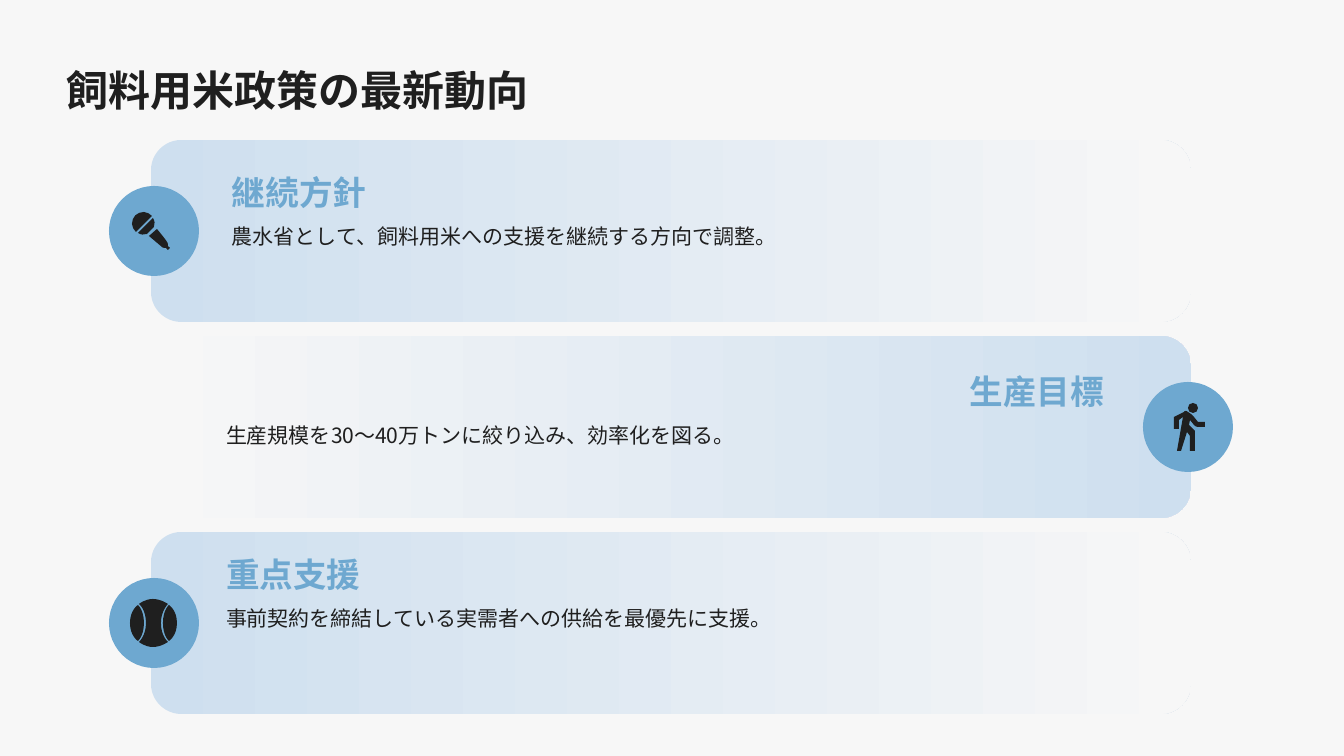
from dataclasses import dataclass

from lxml import etree
from pptx import Presentation
from pptx.dml.color import RGBColor
from pptx.enum.shapes import MSO_SHAPE
from pptx.enum.text import MSO_ANCHOR, MSO_AUTO_SIZE, PP_ALIGN
from pptx.oxml.ns import qn
from pptx.util import Emu, Pt

ROUNDED, OVAL = MSO_SHAPE.ROUNDED_RECTANGLE, MSO_SHAPE.OVAL
LEFT, RIGHT = PP_ALIGN.LEFT, PP_ALIGN.RIGHT
TOP, MIDDLE = MSO_ANCHOR.TOP, MSO_ANCHOR.MIDDLE
NO_AUTOFIT = MSO_AUTO_SIZE.NONE
EMU_PER_PX = 914400 / 100.8


@dataclass(frozen=True)
class Theme:
    font: str = "Noto Sans CJK SC"
    background: RGBColor = RGBColor(0xF7, 0xF7, 0xF7)
    band: RGBColor = RGBColor(0xCE, 0xDF, 0xEF)
    accent: RGBColor = RGBColor(0x6E, 0xA8, 0xD0)
    ink: RGBColor = RGBColor(0x1F, 0x1F, 0x1F)
    title_size: int = 30
    heading_size: int = 24
    body_size: int = 15


THEME = Theme()


def px(*lengths):
    """Turn pixel lengths into a list of EMU lengths."""
    return [Emu(round(length * EMU_PER_PX)) for length in lengths]


def write_text(shape, text, size, color, bold, spacing, anchor, insets, align=LEFT):
    frame = shape.text_frame
    frame.word_wrap = True
    frame.auto_size = NO_AUTOFIT
    frame.vertical_anchor = anchor
    (frame.margin_left, frame.margin_top,
     frame.margin_right, frame.margin_bottom) = px(*insets)
    frame.text = text
    paragraph = frame.paragraphs[0]
    paragraph.alignment = align
    paragraph.line_spacing = spacing
    paragraph.space_before = Pt(0)
    font = paragraph.font
    font.name, font.size, font.bold = THEME.font, Pt(size), bold
    font.color.rgb = color
    defaults = paragraph._p.find(".//" + qn("a:defRPr"))
    etree.SubElement(defaults, qn("a:ea"), typeface=THEME.font)


# Icon outlines in px from the badge centre: pairs are line ends,
# sextets are cubic curves (two control points and an end).
MICROPHONE = [
    [(0, -4), (1, -7, 1, -10, -1, -13), (-1, -13, -16, 2, -16, 2),
     (-13, 4, -10, 4, -7, 3), (-7, 3, 0, -4, 0, -4)],
    [(-2, -15), (-4, -17, -7, -19, -10, -19), (-17, -19, -22, -14, -22, -7),
     (-22, -4, -20, -1, -18, 1), (-18, 1, -2, -15, -2, -15)],
    [(14, 15), (14, 15, 14, 11, 13, 11), (13, 10, 3, -2, 3, -2), (-5, 5), (8, 16),
     (8, 17, 12, 17, 12, 17), (14, 19), (16, 17)],
]
WALKER = [
    [(2, -7), (6, -2), (7, -1, 8, 0, 10, 0), (17, 0), (17, -5), (10, -5),
     (6, -10), (5, -11, 4, -12, 3, -13), (0, -15), (-1, -16, -2, -16, -2, -16),
     (-3, -16, -4, -16, -4, -15), (-14, -10), (-14, 2), (-9, 2), (-9, -7),
     (-5, -10), (-11, 24), (-7, 24), (-1, 5), (2, 9), (2, 24), (7, 24), (7, 4),
     (1, -2)],
    [(5, -14), (8, -14, 10, -16, 10, -19), (10, -22, 8, -24, 5, -24),
     (2, -24, 0, -22, 0, -19), (0, -16, 2, -14, 5, -14)],
]
BALL = [
    [(7, 0), (7, -12, 14, -19, 14, -19), (14, -19, 7, -24, -1, -24),
     (-9, -24, -15, -19, -15, -19), (-15, -19, -8, -14, -8, 0),
     (-8, 13, -15, 19, -15, 19), (-15, 19, -9, 24, -1, 24),
     (7, 24, 14, 19, 14, 19), (14, 19, 7, 13, 7, 0)],
    [(-16, -18), (-16, -18, -24, -13, -24, 0), (-24, 13, -16, 18, -16, 18),
     (-16, 18, -10, 13, -10, 0), (-10, -13, -16, -18, -16, -18)],
    [(15, -18), (15, -18, 9, -13, 9, 0), (9, 13, 15, 18, 15, 18),
     (15, 18, 23, 13, 23, 0), (23, -13, 15, -18, 15, -18)],
]

# Heading, body, alignment, text left, text offset below band top, badge left, icon
BANDS = [
    ("継続方針", "農水省として、飼料用米への支援を継続する方向で調整。",
     LEFT, 219, 17, 109, MICROPHONE),
    ("生産目標", "生産規模を30～40万トンに絞り込み、効率化を図る。",
     RIGHT, 213, 20, 1143, WALKER),
    ("重点支援", "事前契約を締結している実需者への供給を最優先に支援。",
     LEFT, 213, 7, 109, BALL),
]
BAND_LEFT, BAND_TOP, BAND_WIDTH, BAND_HEIGHT, BAND_PITCH = 151, 140, 1040, 182, 196
BADGE = 90
TEXT_WIDTH, HEADING_HEIGHT, BODY_HEIGHT, BODY_DROP = 904, 62, 86, 50
TEXT_INSETS = (13, 6, 13, 6)

presentation = Presentation()
presentation.slide_width, presentation.slide_height = px(1344, 756)
slide = presentation.slides.add_slide(presentation.slide_layouts[5])
slide.background.fill.solid()
slide.background.fill.fore_color.rgb = THEME.background
shapes = slide.shapes

title = shapes.title
title.left, title.top, title.width, title.height = px(52, 29, 1239, 101)
write_text(title, "飼料用米政策の最新動向", THEME.title_size, THEME.ink, True, 1.4,
           MIDDLE, (15, 14, 6, 14))

for index, (heading, body, align, text_left, text_offset, badge_left, icon) in enumerate(BANDS):
    top = BAND_TOP + index * BAND_PITCH
    band = shapes.add_shape(ROUNDED, *px(BAND_LEFT, top, BAND_WIDTH, BAND_HEIGHT))
    band.shadow.inherit = False
    band.line.fill.background()
    band.fill.gradient()
    band.fill.gradient_angle = 0
    colors = [THEME.band, THEME.background]
    if align == RIGHT:
        colors.reverse()
    for stop, color in zip(band.fill.gradient_stops, colors):
        stop.color.rgb = color

    badge_top = top + (BAND_HEIGHT - BADGE) // 2
    badge = shapes.add_shape(OVAL, *px(badge_left, badge_top, BADGE, BADGE))

    builder = shapes.build_freeform(*icon[0][0], scale=EMU_PER_PX)
    for outline in icon:
        if outline is not icon[0]:
            builder.move_to(*outline[0])
        points = [segment[i:i + 2] for segment in outline[1:] for i in range(0, len(segment), 2)]
        builder.add_line_segments(points, close=True)
    symbol = builder.convert_to_shape(*px(badge_left + BADGE // 2, badge_top + BADGE // 2))

    # Each sextet was added as three line ends: merge them into one curve.
    line_ends = iter(symbol._element.findall(".//" + qn("a:lnTo")))
    for segment in (segment for outline in icon for segment in outline[1:]):
        curve = next(line_ends)
        if len(segment) == 6:
            curve.tag = qn("a:cubicBezTo")
            for line_end in (next(line_ends), next(line_ends)):
                curve.append(line_end[0])
                line_end.getparent().remove(line_end)

    for shape, color in ((badge, THEME.accent), (symbol, THEME.ink)):
        shape.shadow.inherit = False
        shape.line.fill.background()
        shape.fill.solid()
        shape.fill.fore_color.rgb = color

    text_top = top + text_offset
    heading_box = shapes.add_textbox(*px(text_left, text_top, TEXT_WIDTH, HEADING_HEIGHT))
    write_text(heading_box, heading, THEME.heading_size, THEME.accent, True, 1.2,
               MIDDLE, TEXT_INSETS, align)
    body_box = shapes.add_textbox(*px(text_left, text_top + BODY_DROP, TEXT_WIDTH, BODY_HEIGHT))
    write_text(body_box, body, THEME.body_size, THEME.ink, False, 1.4, TOP, TEXT_INSETS)

presentation.save("out.pptx")
